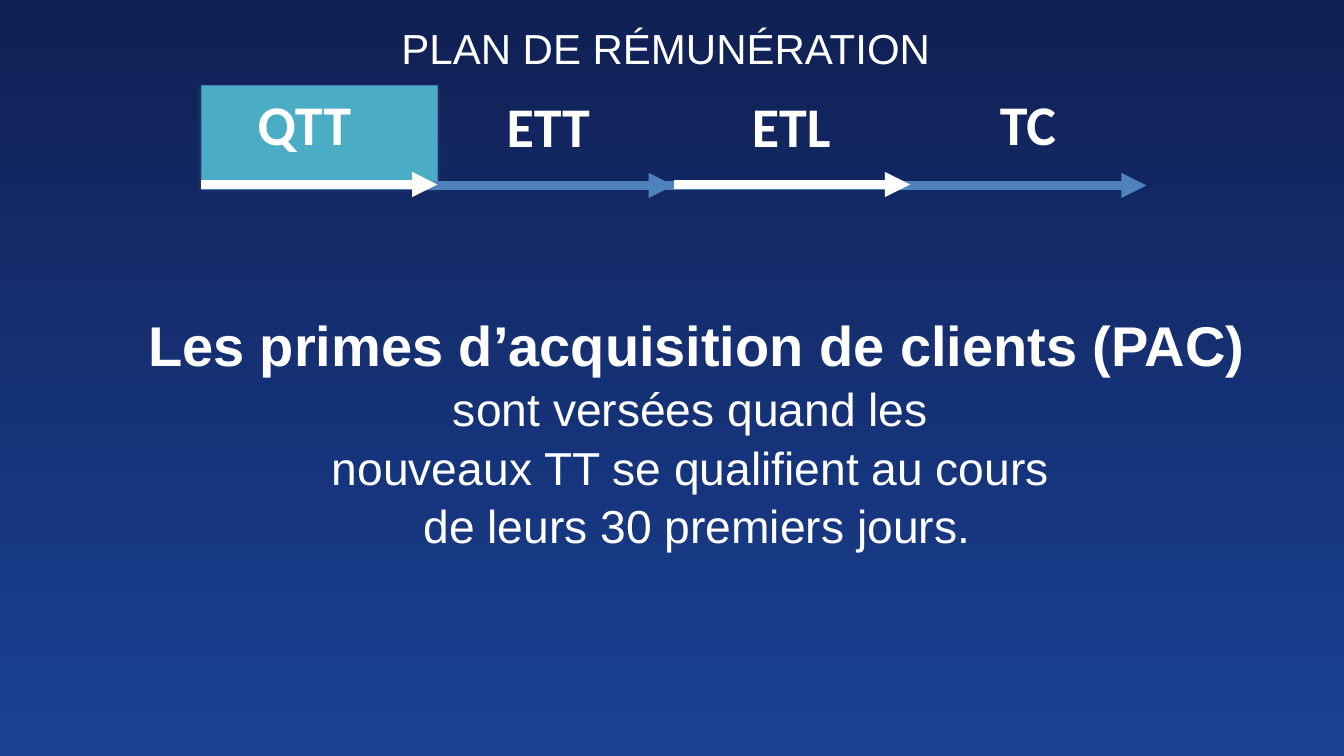
import pptx
import pptx.util
import pptx.dml.color
import pptx.enum.shapes
import pptx.enum.text
import pptx.oxml
import pptx.oxml.ns

Inch = pptx.util.Inches
Pt = pptx.util.Pt
Align = pptx.enum.text.PP_ALIGN
Anchor = pptx.enum.text.MSO_ANCHOR
NS = pptx.oxml.ns.nsdecls("a")


def paint(color, code):
    color.rgb = pptx.dml.color.RGBColor.from_string(code)


def write(shape, box, pad, anchor, runs):
    """Place a text shape and fill its one centred paragraph run by run."""
    shape.left, shape.top, shape.width, shape.height = map(Inch, box)
    frame = shape.text_frame
    frame.word_wrap = True
    frame.auto_size = pptx.enum.text.MSO_AUTO_SIZE.NONE
    frame.vertical_anchor = anchor
    frame.margin_left = frame.margin_right = Inch(pad)
    frame.margin_top = frame.margin_bottom = Inch(pad)
    para = frame.paragraphs[0]
    para.alignment = Align.CENTER
    para.space_before = Pt(0)
    for text, size, face, bold in runs:
        if text == "\n":
            para.add_line_break()
            continue
        run = para.add_run()
        run.text = text
        run.font.size, run.font.name, run.font.bold = Pt(size), face, bold
        paint(run.font.color, "FFFFFF")
    return para


deck = pptx.Presentation()
deck.slide_width, deck.slide_height = Inch(26.67), Inch(15)
slide = deck.slides.add_slide(deck.slide_layouts[1])
shapes = slide.shapes
for item in list(slide.placeholders):
    if item.placeholder_format.idx > 1:
        item.element.getparent().remove(item.element)

# Background: dark at the top, lighter below
back = slide.background.fill
back.gradient()
back.gradient_angle = 90
for stop, code, place in zip(back.gradient_stops, ("1A4194", "102054"), (0, 1)):
    paint(stop.color, code)
    stop.position = place

# Grid of the four stages
left, col, base = 3.99, 4.69, 3.68

# Highlight of the current stage
tile = shapes.add_shape(pptx.enum.shapes.MSO_SHAPE.ROUNDED_RECTANGLE,
                        Inch(left), Inch(1.7), Inch(col), Inch(base - 1.7))
tile.adjustments[0] = 0
tile.fill.solid()
paint(tile.fill.fore_color, "4BACC6")
paint(tile.line.color, "4A7EBB")
tile.line.width = Pt(1)
tile.shadow.inherit = False
glow = pptx.oxml.parse_xml(
    f'<a:outerShdw {NS} blurRad="{Pt(6)}" dist="{Pt(3)}" dir="5400000" rotWithShape="0">'
    '<a:srgbClr val="808080"><a:alpha val="35000"/></a:srgbClr></a:outerShdw>')
tile.element.spPr.find(pptx.oxml.ns.qn("a:effectLst")).append(glow)

# Stage names: middle and top of each
for name, mid, top in (("QTT", 6.04, 1.66), ("ETT", 10.88, 1.69),
                       ("ETL", 15.7, 1.7), ("TC", 20.4, 1.65)):
    label = shapes.add_textbox(0, 0, 0, 0)
    write(label, (mid - col / 2, top, col, 1.55), 0.1, Anchor.BOTTOM,
          [(name, 80, "Calibri", True)])

# Arrows: first column, last column, height, colour
for start, stop, y, code in ((0, 4, base, "4F81BD"), (1, 2, base, "4F81BD"),
                             (0, 1, base - 0.02, "FFFFFF"), (2, 3, base - 0.02, "FFFFFF")):
    arrow = shapes.add_connector(pptx.enum.shapes.MSO_CONNECTOR.STRAIGHT,
                                 Inch(left + start * col), Inch(y),
                                 Inch(left + stop * col), Inch(y))
    paint(arrow.line.color, code)
    arrow.line.width = Pt(12)
    arrow.line._get_or_add_ln().append(
        pptx.oxml.parse_xml(f'<a:tailEnd {NS} type="triangle"/>'))
    arrow.element.spPr.append(pptx.oxml.parse_xml(f"<a:effectLst {NS}/>"))

# Title
write(shapes.title, (3.33, 0.48, 20, 0.93), 0, Anchor.MIDDLE,
      [("PLAN DE RÉMUNÉRATION ", 60, "Arial", False)])

# Message
lines = ("sont versées quand les ", "nouveaux TT se qualifient au cours ",
         "de leurs 30 premiers jours.")
runs = [("Les primes d’acquisition de clients (PAC) ", 80, "Arial", True)]
for spot, line in enumerate(lines):
    if spot:
        runs.append(("\n", 66, "Arial", False))
    runs.append((line, 66, "Arial", False))
para = write(slide.placeholders[1], (2.33, 6, 23, 4.61), 0.1, Anchor.TOP, runs)
para.line_spacing = 1.05
props = para._p.get_or_add_pPr()
props.set("marL", "0")
props.set("indent", "0")
props.append(pptx.oxml.parse_xml(f"<a:buNone {NS}/>"))

deck.save("out.pptx")
